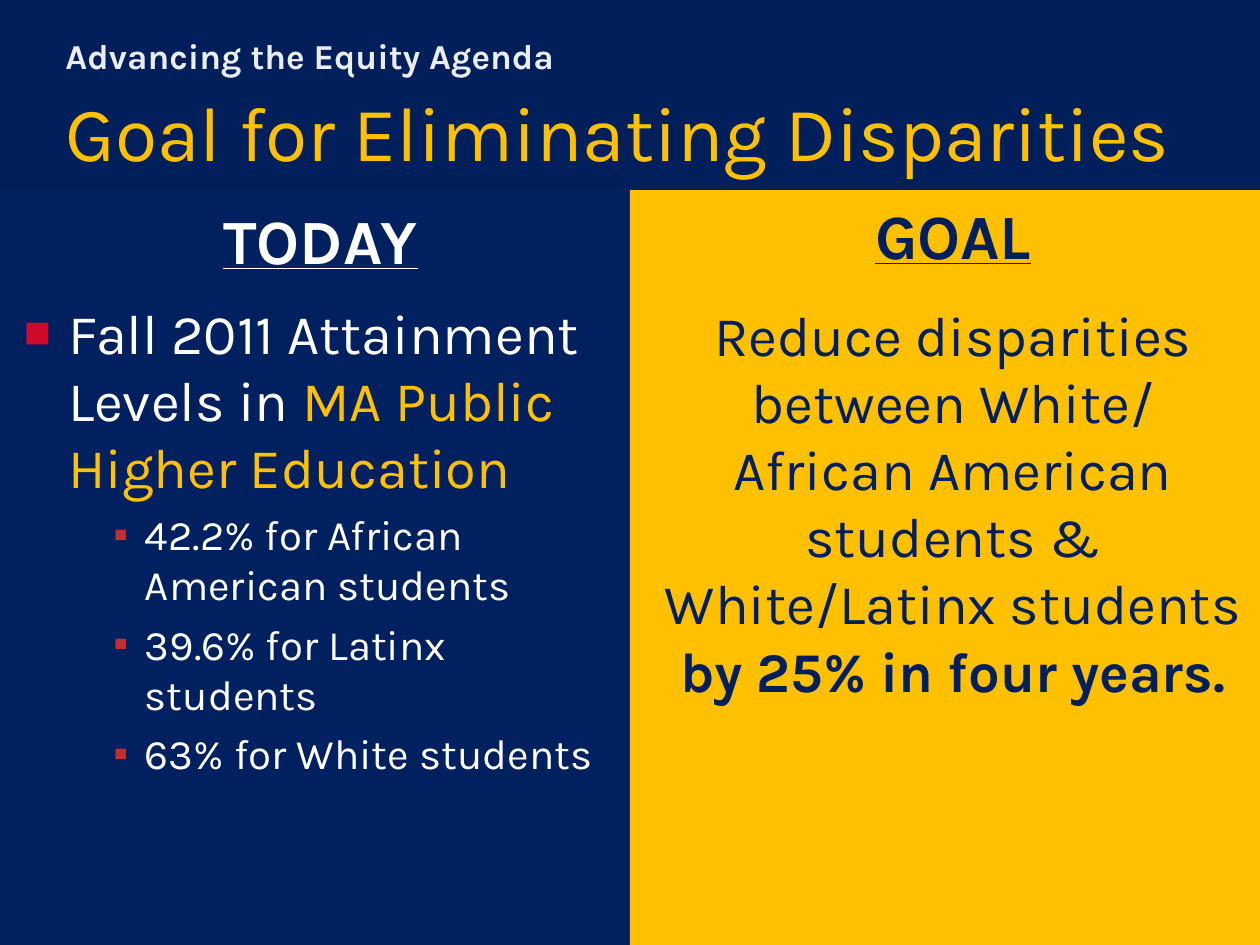
from lxml.etree import SubElement
from pptx import Presentation
from pptx.dml.color import RGBColor
from pptx.enum.shapes import MSO_SHAPE
from pptx.enum.text import MSO_ANCHOR, MSO_AUTO_SIZE, PP_ALIGN
from pptx.oxml.ns import qn
from pptx.util import Inches, Pt

FONT = "Karla"
NAVY, PANEL_NAVY, GOLD, WHITE, PALE = "001F5B", "002060", "FFC000", "FFFFFF", "EAECEE"

# Paragraph styles; margin and indent in inches, before in points
PLAIN = dict()
EYEBROW = dict(margin=0.48, indent=-0.35)
HEADING = dict(align=PP_ALIGN.CENTER, margin=0.13, before=12)
BULLET = dict(margin=0.48, indent=-0.35, before=12, bullet=("■", "CF0A2C", 80))
SUB_BULLET = dict(level=1, margin=1.09, indent=-0.25, before=5, bullet=("▪", "C32D2E", 100))
GOAL_HEADING = dict(align=PP_ALIGN.CENTER, margin=0.13)
GOAL_TEXT = dict(align=PP_ALIGN.CENTER, margin=0.13, before=16)

# Each paragraph: style, runs of (text, size, colour, marks)
EYEBROW_TEXT = [(EYEBROW, [("Advancing the Equity Agenda", 20, PALE, "b")])]
TITLE_TEXT = [(PLAIN, [("Goal for Eliminating Disparities", 44, GOLD, "")])]
TODAY_TEXT = [
    (HEADING, [("TODAY", 36, WHITE, "bu")]),
    (BULLET, [("Fall 2011 Attainment Levels in ", 32, WHITE, ""),
              ("MA Public Higher Education", 32, GOLD, "")]),
] + [(SUB_BULLET, [(text, 24, WHITE, "")]) for text in (
    "42.2% for African American students",
    "39.6% for Latinx students",
    "63% for White students",
)]
GOAL_PANEL_TEXT = [
    (GOAL_HEADING, [("GOAL", 36, NAVY, "bu")]),
    (GOAL_TEXT, [("Reduce disparities between White/ African American students "
                  "& White/Latinx students ", 32, NAVY, ""),
                 ("by 25% in four years.", 32, NAVY, "b")]),
]


def rgb(value):
    return RGBColor.from_string(value)


def place(shape, box):
    shape.left, shape.top, shape.width, shape.height = map(Inches, box)


def paint(shape, color):
    shape.fill.solid()
    shape.fill.fore_color.rgb = rgb(color)


def add_panel(slide, box, color):
    shape = slide.shapes.add_shape(MSO_SHAPE.RECTANGLE, *map(Inches, box))
    shape.shadow.inherit = False
    paint(shape, color)
    shape.line.fill.background()
    return shape


def set_bullet(properties, bullet):
    if bullet is None:
        SubElement(properties, qn("a:buNone"))
        return
    character, color, percent = bullet
    SubElement(SubElement(properties, qn("a:buClr")), qn("a:srgbClr"), val=color)
    SubElement(properties, qn("a:buSzPct"), val=str(percent * 1000))
    SubElement(properties, qn("a:buFont"), typeface="Arial")
    SubElement(properties, qn("a:buChar"), char=character)


def format_paragraph(paragraph, align=PP_ALIGN.LEFT, level=0, margin=0, indent=0,
                     before=0, bullet=None):
    paragraph.alignment = align
    paragraph.level = level
    paragraph.space_before = Pt(before)
    properties = paragraph._p.get_or_add_pPr()
    properties.set("marL", str(Inches(margin)))
    properties.set("indent", str(Inches(indent)))
    set_bullet(properties, bullet)


def write(shape, paragraphs, insets, anchor=MSO_ANCHOR.TOP):
    """Fill a shape with styled paragraphs; insets are left, top, right, bottom."""
    frame = shape.text_frame
    frame.word_wrap = True
    frame.auto_size = MSO_AUTO_SIZE.NONE
    frame.vertical_anchor = anchor
    (frame.margin_left, frame.margin_top,
     frame.margin_right, frame.margin_bottom) = map(Inches, insets)
    for index, (style, runs) in enumerate(paragraphs):
        paragraph = frame.add_paragraph() if index else frame.paragraphs[0]
        format_paragraph(paragraph, **style)
        for text, size, color, marks in runs:
            run = paragraph.add_run()
            run.text = text
            run.font.name = FONT
            run.font.size = Pt(size)
            run.font.color.rgb = rgb(color)
            run.font.bold = "b" in marks
            run.font.underline = "u" in marks


def main():
    presentation = Presentation()
    presentation.slide_width, presentation.slide_height = Inches(10), Inches(7.5)
    slide = presentation.slides.add_slide(presentation.slide_layouts.get_by_name("Two Content"))
    title, eyebrow, today = list(slide.placeholders)[:3]
    body_insets = (0.06, 0.1, 0.1, 0.05)

    header = add_panel(slide, (0, 0, 10, 1.57), NAVY)
    title._element.addprevious(header._element)  # behind the placeholders

    place(eyebrow, (0.33, 0.17, 9.34, 0.5))
    write(eyebrow, EYEBROW_TEXT, body_insets)

    place(title, (0.42, 0.58, 9.17, 0.92))
    write(title, TITLE_TEXT, (0.1, 0.05, 0.05, 0.05), MSO_ANCHOR.MIDDLE)

    place(today, (0, 1.5, 5, 6))
    paint(today, PANEL_NAVY)
    write(today, TODAY_TEXT, body_insets)

    goal = add_panel(slide, (5, 1.51, 5, 5.99), GOLD)
    write(goal, GOAL_PANEL_TEXT, (0.1, 0.05, 0.1, 0.05))

    presentation.save("out.pptx")


if __name__ == "__main__":
    main()
